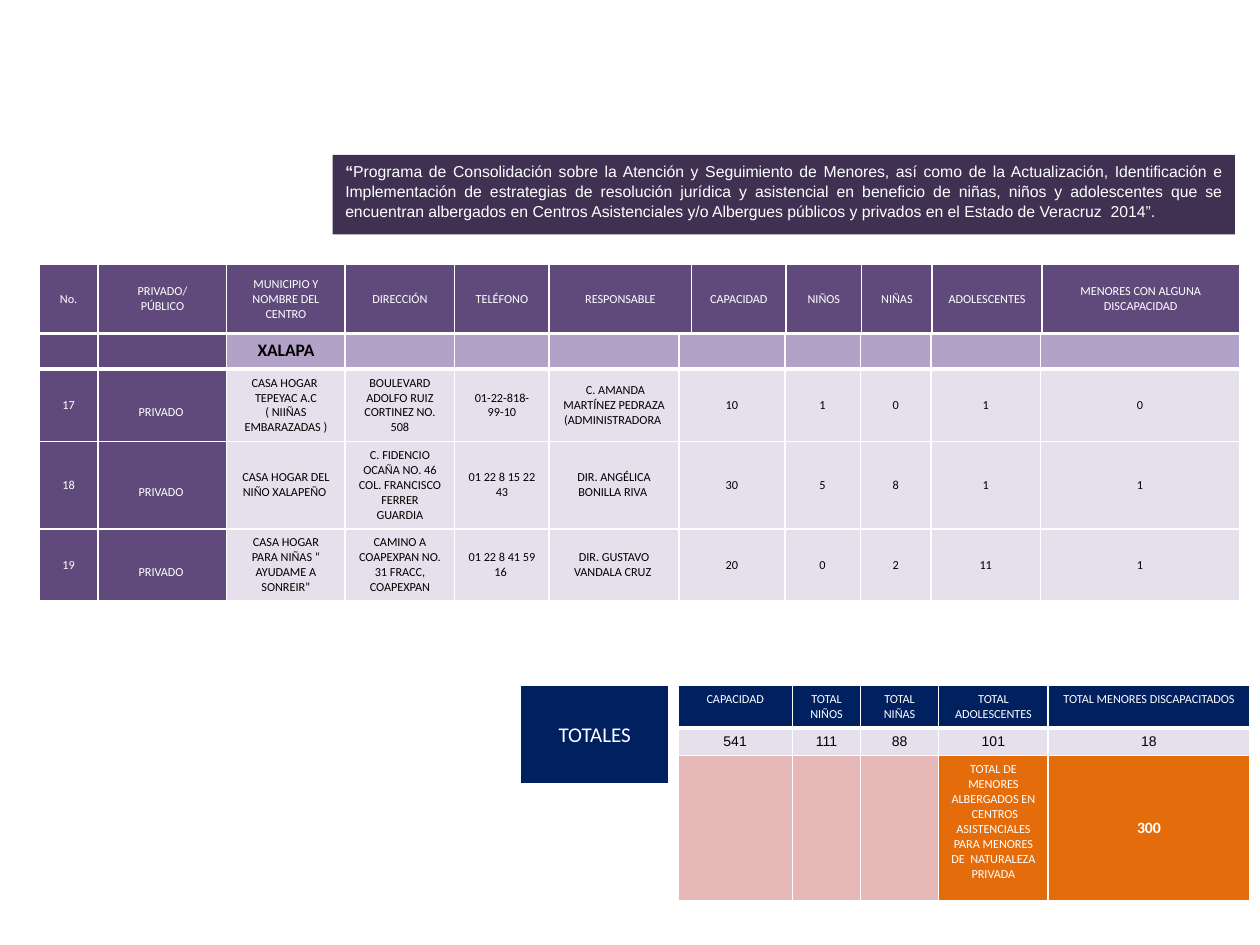
from dataclasses import dataclass, replace

from lxml.etree import SubElement
from pptx import Presentation
from pptx.dml.color import RGBColor
from pptx.enum.text import MSO_ANCHOR, MSO_AUTO_SIZE, PP_ALIGN
from pptx.oxml.ns import qn
from pptx.util import Inches, Pt


@dataclass(frozen=True)
class Theme:
    """Colours, fonts and type sizes of the slide."""
    white: str = "FFFFFF"
    black: str = "000000"
    banner: str = "403152"
    purple: str = "604A7B"
    lilac: str = "B3A2C7"
    pale: str = "E6E0EC"
    navy: str = "002060"
    pink: str = "E6B9B8"
    orange: str = "E46C0A"
    heading_font: str = "Arial"
    table_font: str = "Calibri"
    small: float = 7
    figure: float = 8
    medium: float = 9
    group: float = 10
    large: float = 12


THEME = Theme()


@dataclass(frozen=True)
class Box:
    """A region of the slide in inches."""
    left: float
    top: float
    width: float
    height: float

    def lengths(self):
        """Return the four measures as lengths."""
        return [Inches(value) for value in (self.left, self.top, self.width, self.height)]


@dataclass(frozen=True)
class CellStyle:
    """The look of a table cell."""
    fill: str
    color: str = THEME.white
    size: float = THEME.small
    font: str = THEME.table_font
    bold: bool = False
    anchor: MSO_ANCHOR = MSO_ANCHOR.MIDDLE
    margins: tuple = (0.1, 0.05, 0.1, 0.05)
    bottom_line: float = 1


HEADER = CellStyle(THEME.purple, bottom_line=3)
NUMBER = CellStyle(THEME.purple)
SECTOR = replace(NUMBER, margins=(0.1, 0.17, 0.1, 0.05))
BODY = CellStyle(THEME.pale, THEME.black)
GROUP = CellStyle(THEME.lilac, THEME.black, THEME.group, bold=True,
                  anchor=MSO_ANCHOR.TOP, bottom_line=3)
TOTAL_LABEL = CellStyle(THEME.navy, size=THEME.large, bottom_line=3)
TOTAL_HEADER = CellStyle(THEME.navy, anchor=MSO_ANCHOR.TOP, bottom_line=3)
TOTAL_FIGURE = replace(BODY, size=THEME.figure, font=THEME.heading_font, margins=(0, 0, 0, 0))
EMPTY = CellStyle(THEME.pink)
SUM_LABEL = CellStyle(THEME.orange, anchor=MSO_ANCHOR.TOP)
SUM_FIGURE = CellStyle(THEME.orange, size=THEME.medium, bold=True)

HEADINGS = ["No.", "PRIVADO/\nPÚBLICO", "MUNICIPIO Y NOMBRE DEL CENTRO", "DIRECCIÓN",
            "TELÉFONO", "RESPONSABLE", "CAPACIDAD", "NIÑOS", "NIÑAS", "ADOLESCENTES",
            "MENORES CON ALGUNA DISCAPACIDAD"]
CENTERS = [
    ["17", "PRIVADO ", "CASA HOGAR  TEPEYAC A.C\n( NIIÑAS EMBARAZADAS )",
     "BOULEVARD ADOLFO RUIZ CORTINEZ NO. 508", "01-22-818-99-10",
     " C. AMANDA MARTÍNEZ PEDRAZA (ADMINISTRADORA ", "10", "1", "0", "1", "0"],
    ["18", "PRIVADO ", "CASA HOGAR DEL NIÑO XALAPEÑO ",
     "C. FIDENCIO OCAÑA NO. 46 COL. FRANCISCO FERRER GUARDIA", "01 22 8 15 22 43",
     "DIR. ANGÉLICA BONILLA RIVA ", "30", "5", "8", "1", "1"],
    ["19", "PRIVADO ", "CASA HOGAR PARA NIÑAS “ AYUDAME A SONREIR”",
     "CAMINO A COAPEXPAN NO. 31 FRACC, COAPEXPAN", "01 22 8 41 59 16 ",
     "DIR. GUSTAVO VANDALA CRUZ ", "20", "0", "2", "11", "1"],
]
TOTAL_HEADINGS = ["CAPACIDAD", "TOTAL NIÑOS", "TOTAL NIÑAS", "TOTAL ADOLESCENTES",
                  "TOTAL MENORES DISCAPACITADOS"]
TOTAL_FIGURES = ["541", "111", "88", "101", "18"]
SUM_TEXT = ("TOTAL DE MENORES ALBERGADOS EN  CENTROS ASISTENCIALES PARA MENORES "
            "DE  NATURALEZA PRIVADA")
PROGRAM = ("Programa de Consolidación sobre la Atención y Seguimiento de Menores, así como de la "
           "Actualización, Identificación e Implementación de estrategias de resolución jurídica "
           "y asistencial en beneficio de niñas, niños y adolescentes que se encuentran albergados "
           "en Centros Asistenciales y/o Albergues públicos y privados en el Estado de Veracruz  "
           "2014”.")


def format_run(run, style):
    """Apply the type of a style to a run."""
    run.font.name = style.font
    run.font.size = Pt(style.size)
    run.font.bold = style.bold
    run.font.color.rgb = RGBColor.from_string(style.color)


def draw_borders(cell, bottom_line):
    """Give a cell white borders."""
    properties = cell._tc.get_or_add_tcPr()
    for side, width in (("L", 1), ("R", 1), ("T", 1), ("B", bottom_line)):
        line = SubElement(properties, qn(f"a:ln{side}"), w=str(Pt(width)))
        fill = SubElement(line, qn("a:solidFill"))
        SubElement(fill, qn("a:srgbClr"), val=THEME.white)


def fill_cell(cell, text, style):
    """Write and format one table cell."""
    draw_borders(cell, style.bottom_line)
    cell.fill.solid()
    cell.fill.fore_color.rgb = RGBColor.from_string(style.fill)
    cell.vertical_anchor = style.anchor
    (cell.margin_left, cell.margin_top,
     cell.margin_right, cell.margin_bottom) = map(Inches, style.margins)
    cell.text_frame.text = text
    for paragraph in cell.text_frame.paragraphs:
        paragraph.alignment = PP_ALIGN.CENTER
        for run in paragraph.runs:
            format_run(run, style)
        if not paragraph.runs:
            paragraph._p.get_or_add_endParaRPr().set("sz", str(Pt(style.size).centipoints))


def add_grid(slide, box, widths, heights, rows):
    """Place a table whose rows are lists of text and style pairs."""
    table = slide.shapes.add_table(len(heights), len(widths), *box.lengths()).table
    table.first_row = table.horz_banding = False
    for column, width in zip(table.columns, widths):
        column.width = Inches(width)
    for row, height, content in zip(table.rows, heights, rows):
        row.height = Inches(height)
        for cell, (text, style) in zip(row.cells, content):
            fill_cell(cell, text, style)


def place_banner(slide, box):
    """Set the programme name as the slide title."""
    title = slide.shapes.title
    title.left, title.top, title.width, title.height = box.lengths()
    title.fill.solid()
    title.fill.fore_color.rgb = RGBColor.from_string(THEME.banner)
    frame = title.text_frame
    frame.auto_size = MSO_AUTO_SIZE.NONE
    frame.word_wrap = True
    frame.vertical_anchor = MSO_ANCHOR.TOP
    paragraph = frame.paragraphs[0]
    paragraph.alignment = PP_ALIGN.JUSTIFY
    paragraph.line_spacing = 1.05
    style = CellStyle(THEME.banner, size=THEME.medium, font=THEME.heading_font)
    for text, bold in (("“", True), (PROGRAM, False)):
        run = paragraph.add_run()
        run.text = text
        format_run(run, replace(style, bold=bold))


def place_centers(slide, box):
    """Place the heading table and the table of centres below it."""
    heading_height = 0.55
    first, last = [0.47, 1.02, 0.94, 0.87, 0.75], [0.6, 0.56, 0.87]
    add_grid(slide, replace(box, height=heading_height), first + [1.13, 0.75] + last + [1.57],
             [heading_height], [[(text, HEADER) for text in HEADINGS]])
    group_row = [("", HEADER)] * 2 + [("XALAPA", GROUP)] + [("", GROUP)] * 8
    styles = [NUMBER, SECTOR] + [BODY] * 9
    body = replace(box, top=box.top + heading_height, height=box.height - heading_height)
    add_grid(slide, body, first + [1.03, 0.84] + last + [1.58], [0.28, 0.57, 0.69, 0.57],
             [group_row] + [list(zip(center, styles)) for center in CENTERS])


def place_totals(slide, box):
    """Place the totals label and the totals table beside it."""
    label_width, offset = 1.18, 1.25
    label = replace(box, width=label_width, height=0.79)
    add_grid(slide, label, [label_width], [label.height], [[("TOTALES", TOTAL_LABEL)]])
    figures = replace(box, left=box.left + offset, width=box.width - offset)
    rows = [[(text, TOTAL_HEADER) for text in TOTAL_HEADINGS],
            [(text, TOTAL_FIGURE) for text in TOTAL_FIGURES],
            [("", EMPTY)] * 3 + [(SUM_TEXT, SUM_LABEL), ("300", SUM_FIGURE)]]
    add_grid(slide, figures, [0.91, 0.54, 0.62, 0.87, 1.6], [0.33, 0.22, 1.15], rows)


def main():
    """Build and save the presentation."""
    presentation = Presentation()
    presentation.slide_width, presentation.slide_height = Inches(10), Inches(7.5)
    slide = presentation.slides.add_slide(presentation.slide_layouts[5])
    place_banner(slide, Box(2.64, 1.23, 7.16, 0.63))
    place_centers(slide, Box(0.31, 2.1, 9.53, 2.66))
    place_totals(slide, Box(4.13, 5.44, 5.79, 1.7))
    presentation.save("out.pptx")


if __name__ == "__main__":
    main()
